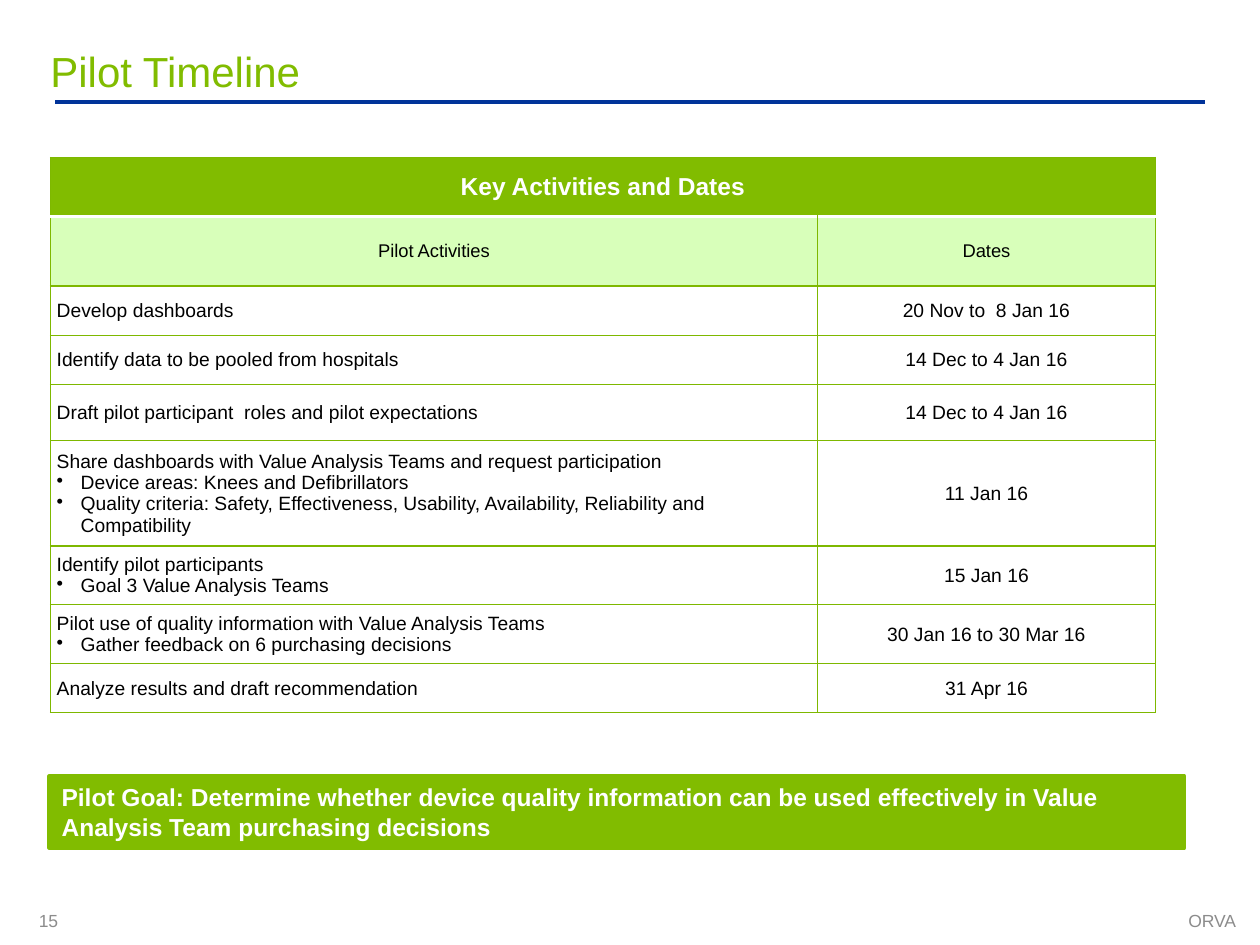
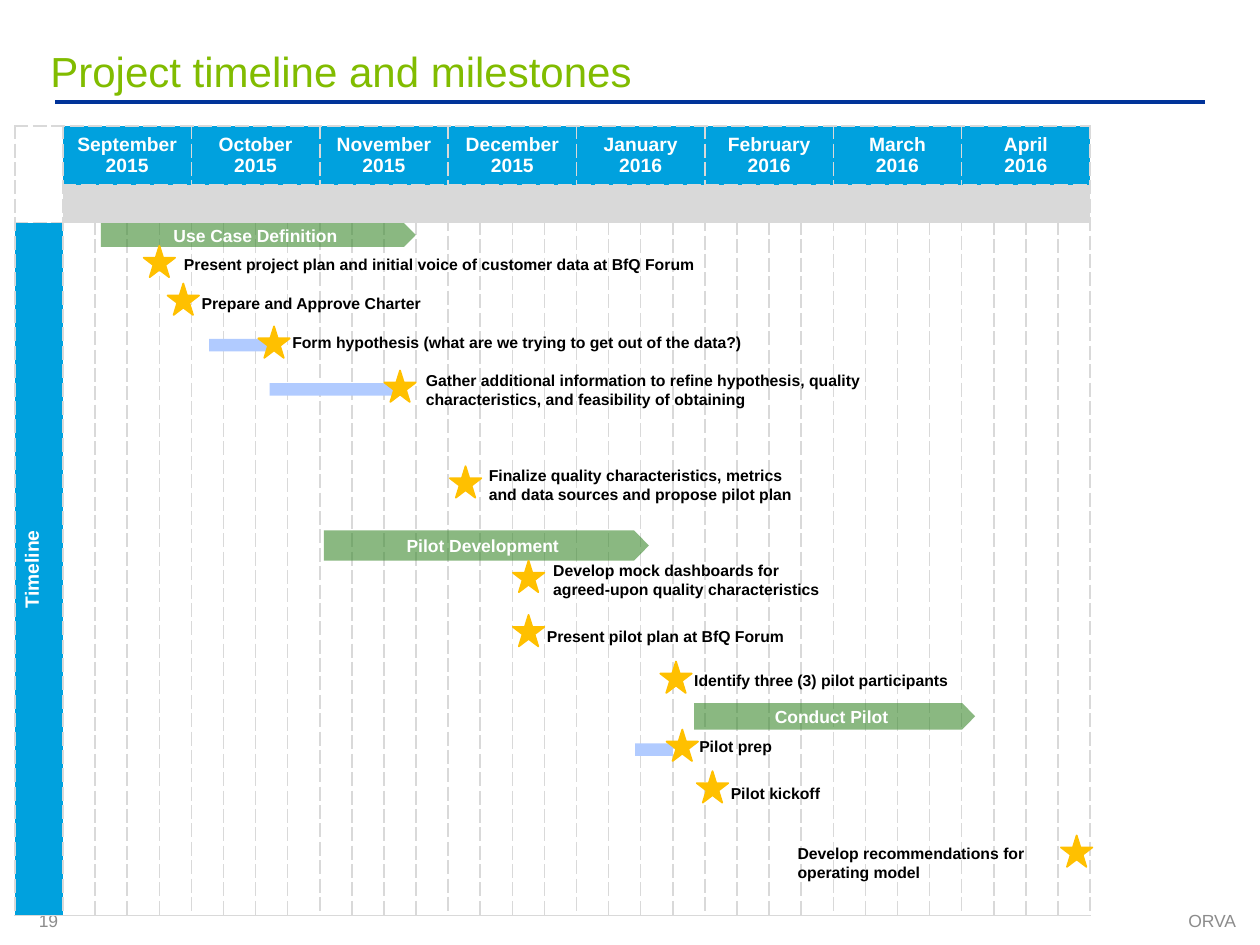
from lxml import etree
from pptx import Presentation
from pptx import util as u
from pptx.dml.color import RGBColor
from pptx.enum import shapes, text
from pptx.oxml import ns

Inches = u.Inches
GREEN = RGBColor(0x81, 0xBC, 0x00)
BORDER_GREEN = RGBColor(0x7E, 0xB8, 0x00)
PALE_GREEN = RGBColor(0xD8, 0xFF, 0xBA)
PHASE_GREEN = RGBColor(0x3C, 0x8A, 0x2E)
NAVY = RGBColor(0x00, 0x33, 0x99)
CYAN = RGBColor(0x00, 0xA1, 0xDE)
PALE_BLUE = RGBColor(0xB1, 0xCB, 0xFF)
GOLD = RGBColor(0xFF, 0xC0, 0x00)
FOOTER_GRAY = RGBColor(0x8C, 0x8C, 0x8C)
GRID_GRAY = RGBColor(0xD9, 0xD9, 0xD9)
WHITE = RGBColor(0xFF, 0xFF, 0xFF)
BLACK = RGBColor(0, 0, 0)

FONT = "Arial"
ORGANIZATION = "ORVA"
LEFT, CENTER, RIGHT = text.PP_ALIGN.LEFT, text.PP_ALIGN.CENTER, text.PP_ALIGN.RIGHT
TOP, MIDDLE = text.MSO_ANCHOR.TOP, text.MSO_ANCHOR.MIDDLE
RECTANGLE = shapes.MSO_SHAPE.RECTANGLE
WEEKS_PER_MONTH = 4
STAR_SIZE = 0.25

ACTIVITIES = [
    (0.39, ["Develop dashboards"], "20 Nov to  8 Jan 16"),
    (0.39, ["Identify data to be pooled from hospitals"], "14 Dec to 4 Jan 16"),
    (0.45, ["Draft pilot participant  roles and pilot expectations"], "14 Dec to 4 Jan 16"),
    (0.78, ["Share dashboards with Value Analysis Teams and request participation",
            "Device areas: Knees and Defibrillators",
            "Quality criteria: Safety, Effectiveness, Usability, Availability, "
            "Reliability and Compatibility"], "11 Jan 16"),
    (0.44, ["Identify pilot participants", "Goal 3 Value Analysis Teams"], "15 Jan 16"),
    (0.44, ["Pilot use of quality information with Value Analysis Teams",
            "Gather feedback on 6 purchasing decisions"], "30 Jan 16 to 30 Mar 16"),
    (0.39, ["Analyze results and draft recommendation"], "31 Apr 16"),
]
MONTHS = [("September", "2015"), ("October", "2015"), ("November", "2015"),
          ("December", "2015"), ("January", "2016"), ("February", "2016"),
          ("March", "2016"), ("April", "2016")]
PHASES = [
    ("Use Case Definition", (0.8, 1.77, 2.5, 0.19)),
    ("Pilot Development", (2.57, 4.21, 2.58, 0.24)),
    ("Conduct Pilot", (5.51, 5.58, 2.23, 0.21)),
]
WORK_BARS = [(1.66, 2.69, 0.47, 0.1), (2.14, 3.04, 1, 0.1), (5.04, 5.9, 0.3, 0.1)]
MILESTONES = [
    ((1.14, 1.95), (1.46, 2.02, 4.4, 0.15),
     "Present project plan and initial voice of customer data at BfQ Forum"),
    ((1.33, 2.25), (1.6, 2.33, 4.4, 0.15), "Prepare and Approve Charter"),
    ((2.05, 2.59), (2.32, 2.64, 5.4, 0.15),
     "Form hypothesis (what are we trying to get out of the data?)"),
    ((3.05, 2.94), (3.38, 2.94, 4.3, 0.3),
     "Gather additional information to refine hypothesis, quality characteristics, "
     "and feasibility of obtaining"),
    ((3.57, 3.7), (3.88, 3.7, 2.56, 0.3),
     "Finalize quality characteristics, metrics and data sources and propose pilot plan"),
    ((4.07, 4.45), (4.39, 4.45, 2.25, 0.3),
     "Develop mock dashboards for agreed-upon quality characteristics"),
    ((4.07, 4.88), (4.34, 4.97, 2.13, 0.15), "Present pilot plan at BfQ Forum"),
    ((5.24, 5.25), (5.51, 5.32, 2.13, 0.15), "Identify three (3) pilot participants"),
    ((5.29, 5.79), (5.55, 5.85, 1.83, 0.15), "Pilot prep"),
    ((5.53, 6.12), (5.8, 6.22, 1.83, 0.15), "Pilot kickoff"),
    ((8.42, 6.63), (6.33, 6.7, 2.01, 0.3), "Develop recommendations for operating model"),
]


def apply_format(target, values):
    for name, value in values.items():
        setattr(target, name, value)


def inches(box):
    return [Inches(length) for length in box]


def set_margins(container, horizontal, vertical):
    apply_format(container, {
        "margin_left": Inches(horizontal), "margin_right": Inches(horizontal),
        "margin_top": Inches(vertical), "margin_bottom": Inches(vertical)})


def add_bullet(paragraph):
    properties = paragraph._p.get_or_add_pPr()
    properties.set("marL", str(Inches(0.19)))
    properties.set("indent", str(-Inches(0.19)))
    etree.SubElement(properties, ns.qn("a:buChar")).set("char", "•")


def write_lines(frame, lines, size, color, bold=False, alignment=LEFT, bulleted=False):
    for index, line in enumerate(lines):
        paragraph = frame.add_paragraph() if index else frame.paragraphs[0]
        paragraph.alignment = alignment
        run = paragraph.add_run()
        run.text = line
        apply_format(run.font, {"name": FONT, "size": u.Pt(size), "bold": bold})
        run.font.color.rgb = color
        if bulleted and index:
            add_bullet(paragraph)


def add_label(slide, box, content, size, color, bold=False, alignment=LEFT,
              margin=0, wrap=True):
    frame = slide.shapes.add_textbox(*inches(box)).text_frame
    apply_format(frame, {"word_wrap": wrap, "vertical_anchor": MIDDLE})
    set_margins(frame, margin, margin / 2)
    write_lines(frame, [content], size, color, bold, alignment)


def add_block(slide, kind, box, color, line_width=0):
    shape = slide.shapes.add_shape(kind, *inches(box))
    shape.shadow.inherit = False
    shape.fill.solid()
    shape.fill.fore_color.rgb = color
    if line_width:
        shape.line.color.rgb = color
        shape.line.width = u.Pt(line_width)
    else:
        shape.line.fill.background()
    return shape


def add_rule(slide):
    rule = slide.shapes.add_connector(
        shapes.MSO_CONNECTOR.STRAIGHT, *inches((0.44, 0.81, 9.56, 0.81)))
    rule.line.color.rgb = NAVY
    rule.line.width = u.Pt(2.25)
    etree.SubElement(rule._element.spPr, ns.qn("a:effectLst"))


def add_titled_slide(presentation, title, number):
    slide = presentation.slides.add_slide(presentation.slide_layouts[5])
    placeholder = slide.shapes.title
    apply_format(placeholder, dict(zip(
        ("left", "top", "width", "height"), inches((0.4, 0.36, 9.2, 1.3)))))
    frame = placeholder.text_frame
    apply_format(frame, {"vertical_anchor": TOP, "word_wrap": True,
                         "auto_size": text.MSO_AUTO_SIZE.NONE})
    set_margins(frame, 0, 0)
    write_lines(frame, [title], 24, GREEN)
    add_rule(slide)
    add_label(slide, (6.83, 7.22, 2.98, 0.17), ORGANIZATION, 10, FOOTER_GRAY,
              alignment=RIGHT)
    add_label(slide, (0.21, 7.17, 0.37, 0.27), number, 10, FOOTER_GRAY,
              margin=0.1, wrap=False)
    return slide


def set_border(cell, sides, color, width, dash="solid"):
    properties = cell._tc.get_or_add_tcPr()
    for side in sides:
        line = etree.SubElement(properties, ns.qn(f"a:ln{side}"), w=str(u.Pt(width)))
        fill = etree.SubElement(line, ns.qn("a:solidFill"))
        etree.SubElement(fill, ns.qn("a:srgbClr"), val=str(color))
        etree.SubElement(line, ns.qn("a:prstDash"), val=dash)


def fill_cell(cell, color):
    cell.fill.solid()
    cell.fill.fore_color.rgb = color


def add_grid(slide, left, top, widths, heights):
    table = slide.shapes.add_table(
        len(heights), len(widths),
        *inches((left, top, sum(widths), sum(heights)))).table
    apply_format(table, {"first_row": False, "horz_banding": False})
    for column, width in zip(table.columns, widths):
        column.width = Inches(width)
    for row, height in zip(table.rows, heights):
        row.height = Inches(height)
    return table


def write_cell(cell, lines, size, color, margins, **style):
    set_margins(cell, *margins)
    cell.vertical_anchor = MIDDLE
    write_lines(cell.text_frame, lines, size, color, **style)


def add_activity_table(slide):
    heights = [0.47, 0.55] + [height for height, _, _ in ACTIVITIES]
    table = add_grid(slide, 0.4, 1.25, [6.09, 2.68], heights)
    for row_index, row in enumerate(table.rows):
        for cell in row.cells:
            if row_index == 0:
                set_border(cell, "LRT", BORDER_GREEN, 0.75)
                set_border(cell, "B", WHITE, 2)
                fill_cell(cell, GREEN)
            elif row_index == 1:
                set_border(cell, "LR", BORDER_GREEN, 0.75)
                set_border(cell, "T", WHITE, 2)
                set_border(cell, "B", BORDER_GREEN, 0.75)
                fill_cell(cell, PALE_GREEN)
            else:
                set_border(cell, "LRTB", BORDER_GREEN, 0.75)
                fill_cell(cell, WHITE)
    table.cell(0, 0).merge(table.cell(0, 1))
    write_cell(table.cell(0, 0), ["Key Activities and Dates"], 14, WHITE, (0.1, 0.1),
               bold=True, alignment=CENTER)
    for column, heading in enumerate(["Pilot Activities", "Dates"]):
        write_cell(table.cell(1, column), [heading], 10.5, BLACK, (0.1, 0.1),
                   alignment=CENTER)
    for row, (_, activity, dates) in enumerate(ACTIVITIES, start=2):
        write_cell(table.cell(row, 0), activity, 11, BLACK, (0.05, 0.05), bulleted=True)
        write_cell(table.cell(row, 1), [dates], 11, BLACK, (0.05, 0.05),
                   alignment=CENTER)


def add_calendar(slide):
    weeks = len(MONTHS) * WEEKS_PER_MONTH
    table = add_grid(slide, 0.12, 1, [0.38] + [8.16 / weeks] * weeks, [0.46, 0.29, 5.5])
    row_colors = [CYAN, GRID_GRAY, WHITE]
    for row_index, row in enumerate(table.rows):
        for column, cell in enumerate(row.cells):
            set_margins(cell, 0, 0)
            set_border(cell, "LRT", GRID_GRAY, 1, "sysDash")
            set_border(cell, "B", GRID_GRAY, 1, "sysDash" if row_index == 1 else "solid")
            fill_cell(cell, row_colors[row_index] if column else WHITE)
    table.cell(0, 0).merge(table.cell(1, 0))
    for index, month in enumerate(MONTHS):
        first = 1 + index * WEEKS_PER_MONTH
        cell = table.cell(0, first)
        cell.merge(table.cell(0, first + WEEKS_PER_MONTH - 1))
        write_cell(cell, month, 11, WHITE, (0.1, 0.05), bold=True, alignment=CENTER)
    side = table.cell(2, 0)
    fill_cell(side, CYAN)
    side._tc.get_or_add_tcPr().set("vert", "vert270")
    write_cell(side, ["Timeline"], 11, WHITE, (0.1, 0.05), bold=True, alignment=CENTER)


def add_phase(slide, name, box):
    arrow = add_block(slide, shapes.MSO_SHAPE.PENTAGON, box, PHASE_GREEN)
    arrow.adjustments[0] = 0.49
    color = arrow._element.spPr.find(".//" + ns.qn("a:srgbClr"))
    etree.SubElement(color, ns.qn("a:alpha"), val="60000")
    arrow.text_frame.vertical_anchor = MIDDLE
    write_lines(arrow.text_frame, [name], 10, WHITE, True, CENTER)


def add_goal(slide, content):
    banner = add_block(slide, RECTANGLE, (0.39, 6.16, 9.01, 0.57), GREEN, 2)
    apply_format(banner.text_frame, {"vertical_anchor": TOP, "word_wrap": True})
    write_lines(banner.text_frame, [content], 14, WHITE, True)


def add_milestone(slide, corner, label_box, content):
    add_block(slide, shapes.MSO_SHAPE.STAR_5_POINT,
              (*corner, STAR_SIZE, STAR_SIZE), GOLD, 1)
    add_label(slide, label_box, content, 9, BLACK, bold=True)


def main():
    presentation = Presentation()
    apply_format(presentation, {"slide_width": Inches(10), "slide_height": Inches(7.5)})

    pilot = add_titled_slide(presentation, "Pilot Timeline", "15")
    add_activity_table(pilot)
    add_goal(pilot, "Pilot Goal: Determine whether device quality information can be "
                    "used effectively in Value Analysis Team purchasing decisions")

    project = add_titled_slide(presentation, "Project timeline and milestones", "19")
    add_calendar(project)
    for box in WORK_BARS:
        add_block(project, RECTANGLE, box, PALE_BLUE)
    for name, box in PHASES:
        add_phase(project, name, box)
    for corner, label_box, content in MILESTONES:
        add_milestone(project, corner, label_box, content)

    presentation.save("out.pptx")


if __name__ == "__main__":
    main()
